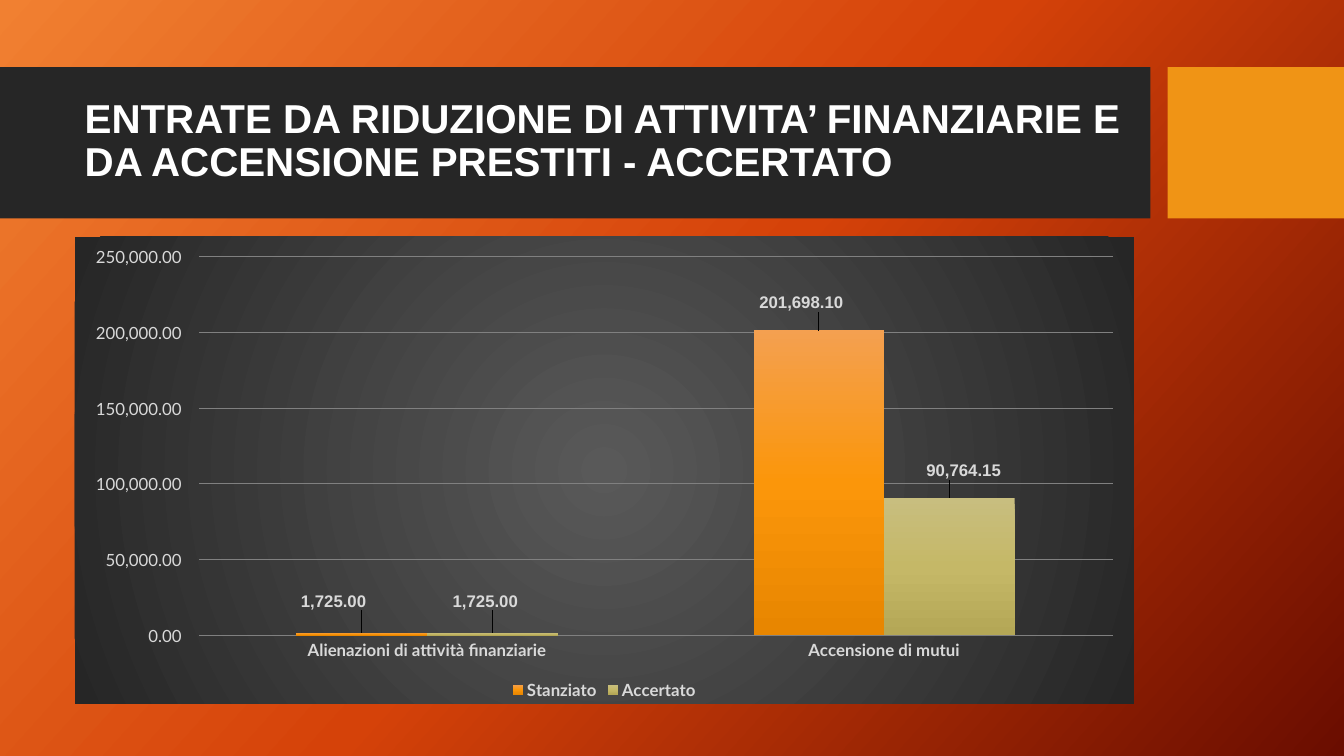
import pptx
import pptx.chart.data
import pptx.enum.chart
import pptx.enum.shapes
import pptx.enum.text
import pptx.oxml
import pptx.oxml.ns
import pptx.util

Pt = pptx.util.Pt
RGB = pptx.dml.color.RGBColor
qn = pptx.oxml.ns.qn
NS = pptx.oxml.ns.nsdecls("a", "c")

HUE = {"band": "262626", "accent": "F09415", "white": "FFFFFF",
       "label": "D9D9D9", "grid": "808080"}
BACK = {0: "F18031", 50: "D54209", 100: "6A0D00"}
PANEL = {0: "595959", 100: "262626"}
FORM = "#,##0.00\\ _€"
CATS = ["Alienazioni di attività finanziarie", "Accensione di mutui"]

# Name, values, gradient, label shifts as fractions of the chart
SERIES = [
    ("Stanziato", [1725, 201698.1], {0: "F4A050", 50: "FB960A", 100: "E88600"},
     [(-0.02, -0.04), (-0.01, -0.03)]),
    ("Accertato", [1725, 90764.15], {0: "C8BE7F", 50: "C5B867", 100: "B4A756"},
     [(0, -0.04), (0.02, -0.03)]),
]


def style(font, face="Lato", size=12, hue="label", bold=False):
    font.name, font.size, font.bold = face, Pt(size), bold
    font.color.rgb = RGB.from_string(HUE[hue])


def write(frame, text, space=1.0, **look):
    para = frame.paragraphs[0]
    para.line_spacing = space
    run = para.add_run()
    run.text = text
    style(run.font, **look)


def blend(stops, angle=None):
    """Gradient fill element: linear with an angle, else circular."""
    marks = "".join(f'<a:gs pos="{pos * 1000}"><a:srgbClr val="{hue}"/></a:gs>'
                    for pos, hue in stops.items())
    if angle is None:
        way = ('<a:path path="circle"><a:fillToRect l="50000" t="50000" '
               'r="50000" b="50000"/></a:path>')
    else:
        way = f'<a:lin ang="{angle * 60000}" scaled="0"/>'
    return pptx.oxml.parse_xml(f'<a:gradFill {NS} rotWithShape="1">'
                               f'<a:gsLst>{marks}</a:gsLst>{way}</a:gradFill>')


def shade(fill, root, stops, angle):
    fill.solid()
    old = next(root.iter(qn("a:solidFill")))
    old.getparent().replace(old, blend(stops, angle))


def layout(x, y, size=None):
    """Manual chart layout, in fractions of the chart."""
    parts = [("x", x), ("y", y)]
    if size:
        parts = [("layoutTarget", "inner"), ("xMode", "edge"), ("yMode", "edge"),
                 *parts, ("w", size[0]), ("h", size[1])]
    body = "".join(f'<c:{tag} val="{val}"/>' for tag, val in parts)
    return pptx.oxml.parse_xml(f'<c:layout {NS}><c:manualLayout>{body}'
                               '</c:manualLayout></c:layout>')


def block(slide, left, top, width, height, hue):
    box = slide.shapes.add_shape(pptx.enum.shapes.MSO_SHAPE.RECTANGLE,
                                 Pt(left), Pt(top), Pt(width), Pt(height))
    box.shadow.inherit = False
    box.fill.solid()
    box.fill.fore_color.rgb = RGB.from_string(HUE[hue])
    box.line.fill.background()


def header(slide, left, top, width, height):
    # Dark band and accent block
    band = width - 138.2
    block(slide, left, top, band, height, "band")
    block(slide, left + width - 126, top, 126, height, "accent")
    # Title, brought in front of the band
    title = slide.shapes.title
    slide.shapes._spTree.append(title._element)
    title.left, title.top = Pt(left + 53.3), Pt(top + 10.8)
    title.width, title.height = Pt(756.7), Pt(85)
    frame = title.text_frame
    frame.word_wrap = True
    frame.auto_size = pptx.enum.text.MSO_AUTO_SIZE.NONE
    frame.vertical_anchor = pptx.enum.text.MSO_ANCHOR.MIDDLE
    write(frame, "ENTRATE DA RIDUZIONE DI ATTIVITA’ FINANZIARIE E "
          "DA ACCENSIONE PRESTITI - ACCERTATO",
          space=0.9, face="Arial", size=28.8, hue="white", bold=True)
    frame.paragraphs[0].alignment = pptx.enum.text.PP_ALIGN.LEFT


def bars(plot):
    place = pptx.enum.chart.XL_LABEL_POSITION.OUTSIDE_END
    for series, (_, vals, stops, shifts) in zip(plot.series, SERIES):
        shade(series.format.fill, series._element, stops, 90)
        series.invert_if_negative = False
        tags = series.data_labels
        tags.show_value = True
        tags.number_format, tags.number_format_is_linked = FORM, False
        tags.position = place
        style(tags.font, face="Arial", bold=True)
        # Each label is nudged away from its bar
        for num, shift in enumerate(shifts):
            tag = series.points[num].data_label
            style(tag.font, face="Arial", bold=True)
            tag.position = place
            node = tags._element.findall(qn("c:dLbl"))[num]
            spot = layout(*shift)
            node.find(qn("c:idx")).addnext(spot)
            spot.addnext(pptx.oxml.parse_xml(
                f'<c:numFmt {NS} formatCode="{FORM}" sourceLinked="0"/>'))


def graph(slide, left, top, width, height):
    data = pptx.chart.data.CategoryChartData(number_format=FORM)
    data.categories = CATS
    for name, vals, *_ in SERIES:
        data.add_series(name, vals)
    chart = slide.shapes.add_chart(
        pptx.enum.chart.XL_CHART_TYPE.COLUMN_CLUSTERED,
        Pt(left), Pt(top), Pt(width), Pt(height), data).chart
    chart.has_title = False
    style(chart.font, size=10, hue="white")

    # Panel and plot area
    panel = pptx.oxml.parse_xml(f'<c:spPr {NS}><a:ln><a:noFill/></a:ln></c:spPr>')
    panel.insert(0, blend(PANEL))
    root = chart._chartSpace
    root.find(qn("c:chart")).addnext(panel)
    area = root.chart.plotArea
    for old in area.findall(qn("c:layout")):
        area.remove(old)
    area.insert(0, layout(0.117, 0.043, (0.863, 0.811)))

    # Axes
    for axis in (chart.category_axis, chart.value_axis):
        axis.major_tick_mark = pptx.enum.chart.XL_TICK_MARK.NONE
        axis.minor_tick_mark = pptx.enum.chart.XL_TICK_MARK.NONE
        axis.format.line.fill.background()
        style(axis.tick_labels.font, bold=axis is not chart.value_axis)
    style(chart.category_axis.tick_labels.font, bold=True)
    scale = chart.value_axis
    style(scale.tick_labels.font)
    scale.minimum_scale, scale.maximum_scale = 0, 250000
    scale.major_unit = 50000
    scale.tick_labels.number_format = FORM
    scale.tick_labels.number_format_is_linked = False
    grid = scale.major_gridlines.format.line
    grid.width = Pt(0.75)
    grid.color.rgb = RGB.from_string(HUE["grid"])

    # Legend and columns
    chart.has_legend = True
    chart.legend.position = pptx.enum.chart.XL_LEGEND_POSITION.BOTTOM
    chart.legend.include_in_layout = False
    style(chart.legend.font, bold=True)
    plot = chart.plots[0]
    plot.gap_width, plot.overlap, plot.vary_by_categories = 150, 0, False
    bars(plot)


def main():
    deck = pptx.Presentation()
    deck.slide_width, deck.slide_height = Pt(960), Pt(540)
    slide = deck.slides.add_slide(deck.slide_layouts.get_by_name("Title Only"))
    shade(slide.background.fill, slide._element, BACK, 42)
    header(slide, 0, 48, 960, 108)
    graph(slide, 53.3, 169.2, 756.7, 333.4)
    deck.save("out.pptx")


if __name__ == "__main__":
    main()
